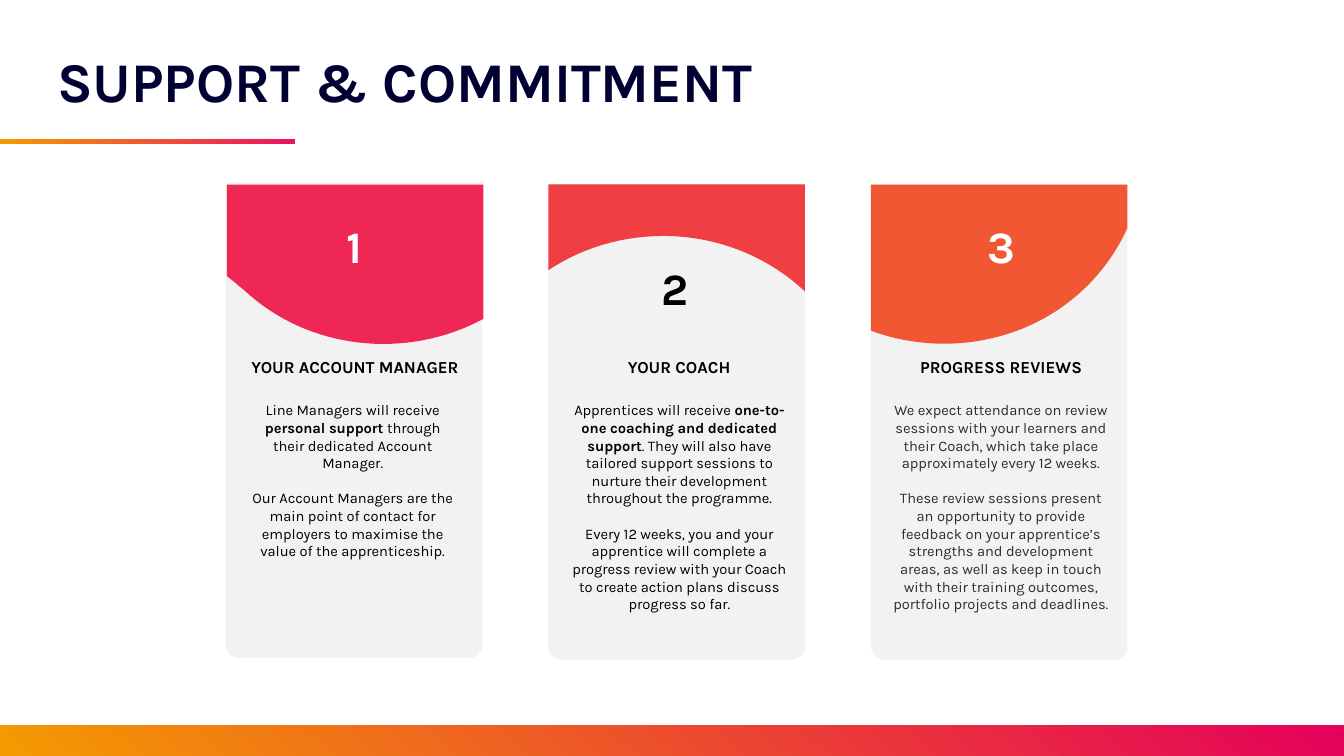
from pptx import Presentation
from pptx.dml.color import RGBColor
from pptx.enum.shapes import MSO_SHAPE
from pptx.enum.text import MSO_ANCHOR, PP_ALIGN
from pptx.util import Pt

FONT = "Karla"
NAVY = RGBColor(0x00, 0x00, 0x33)
BLACK = RGBColor(0x00, 0x00, 0x00)
WHITE = RGBColor(0xFF, 0xFF, 0xFF)
CHARCOAL = RGBColor(0x2C, 0x2C, 0x32)
GREY = RGBColor(0xF2, 0xF2, 0xF2)
AMBER = RGBColor(0xF4, 0x9B, 0x00)
MAGENTA = RGBColor(0xE5, 0x00, 0x5B)
PINK = RGBColor(0xED, 0x11, 0x64)
ROSE = RGBColor(0xEE, 0x27, 0x54)
RED = RGBColor(0xEF, 0x3F, 0x43)
ORANGE = RGBColor(0xF1, 0x57, 0x32)

TITLE = "SUPPORT & COMMITMENT"
CARD_LEFT, CARD_STEP, CARD_TOP, CARD_W, CARD_H = 161.3, 230.4, 131.8, 183.2, 339.6
CORNER = 9.5
HEAD_TOP, BODY_TOP = 254.9, 283

CARDS = [
    {
        "number": "1", "number_color": WHITE, "number_at": (161.5, 156.2),
        "heading": "YOUR ACCOUNT MANAGER", "heading_left": 162,
        "body_left": 171.5, "body_w": 161, "body_color": BLACK,
        "nudge": (0, -1.3), "cap_shift": 0.7, "cap_color": ROSE,
        "cap_curves": [
            [(0, 65.5), (4.3, 68.4), (7.9, 72), (11.8, 74.9)],
            [(11.8, 74.9), (58.3, 118.8), (128.9, 125.3), (183.2, 96)],
        ],
        "body": [
            [("Line Managers will receive ", False), ("personal support", True),
             (" through their dedicated Account Manager.", False)],
            [("Our Account Managers are the main point of contact for employers "
              "to maximise the value of the apprenticeship.", False)],
        ],
    },
    {
        "number": "2", "number_color": BLACK, "number_at": (390.5, 186.5),
        "heading": "YOUR COACH", "heading_left": 393.5,
        "body_left": 400.3, "body_w": 170, "body_color": BLACK,
        "nudge": (0, 0), "cap_shift": 0, "cap_color": RED,
        "cap_curves": [
            [(0, 61.2), (55.4, 24.5), (132.5, 28.8), (183.2, 76.3)],
        ],
        "body": [
            [("Apprentices will receive ", False),
             ("one-to-one coaching and dedicated support", True),
             (". They will also have tailored support sessions to nurture their "
              "development throughout the programme.", False)],
            [("Every 12 weeks, you and your apprentice will complete a progress "
              "review with your Coach to create action plans discuss progress so far.", False)],
        ],
    },
    {
        "number": "3", "number_color": WHITE, "number_at": (623.5, 156.2),
        "heading": "PROGRESS REVIEWS", "heading_left": 623.5,
        "body_left": 629.3, "body_w": 171.4, "body_color": CHARCOAL,
        "nudge": (0, 0), "cap_shift": 0, "cap_color": ORANGE,
        "cap_curves": [
            [(0, 104.4), (50.4, 123.1), (110.9, 113.8), (151.9, 74.9)],
            [(151.9, 74.9), (165.6, 61.9), (175.7, 47.5), (183.2, 31)],
        ],
        "body": [
            [("We expect attendance on review sessions with your learners and their "
              "Coach, which take place approximately every 12 weeks.", False)],
            [("These review sessions present an opportunity to provide feedback on "
              "your apprentice’s strengths and development areas, as well as keep in "
              "touch with their training outcomes, portfolio projects and deadlines.", False)],
        ],
    },
]


def paint(s, color):
    s.shadow.inherit = False
    s.fill.solid()
    s.fill.fore_color.rgb = color
    s.line.fill.background()


def add_gradient_bar(shapes, left, top, width, height, colors, angle):
    s = shapes.add_shape(MSO_SHAPE.RECTANGLE, Pt(left), Pt(top), Pt(width), Pt(height))
    s.shadow.inherit = False
    s.line.fill.background()
    s.fill.gradient()
    s.fill.gradient_angle = angle
    for stop, color in zip(s.fill.gradient_stops, colors):
        stop.color.rgb = color


def add_text(shapes, left, top, width, height, paragraphs, size, color,
             align=PP_ALIGN.CENTER, inset=True, gap=0):
    tf = shapes.add_textbox(Pt(left), Pt(top), Pt(width), Pt(height)).text_frame
    tf.word_wrap = True
    if not inset:
        tf.margin_left = tf.margin_right = tf.margin_top = tf.margin_bottom = 0
    for i, runs in enumerate(paragraphs):
        p = tf.add_paragraph() if i else tf.paragraphs[0]
        p.alignment = align
        if i:
            p.space_before = Pt(gap)
        for text, bold in runs:
            r = p.add_run()
            r.text = text
            r.font.name = FONT
            r.font.size = Pt(size)
            r.font.bold = bold
            r.font.color.rgb = color
    return tf


def bezier(points, steps=32):
    a, b, c, d = points
    for i in range(steps + 1):
        t = i / steps
        u = 1 - t
        yield tuple(u**3 * a[k] + 3 * u * u * t * b[k] + 3 * u * t * t * c[k] + t**3 * d[k]
                    for k in (0, 1))


def add_cap(shapes, left, top, curves, color):
    outline = [xy for curve in curves for xy in bezier(curve)] + [(CARD_W, 0)]
    builder = shapes.build_freeform(0, 0, scale=Pt(1) / 100)
    builder.add_line_segments([(round(x * 100), round(y * 100)) for x, y in outline], close=True)
    paint(builder.convert_to_shape(Pt(left), Pt(top)), color)


def add_card(shapes, index, card):
    left = CARD_LEFT + index * CARD_STEP
    dx, dy = card["nudge"]
    s = shapes.add_shape(MSO_SHAPE.ROUND_2_SAME_RECTANGLE, Pt(left + dx), Pt(CARD_TOP + dy),
                         Pt(CARD_W), Pt(CARD_H))
    s.adjustments[0] = 0
    s.adjustments[1] = CORNER / CARD_W
    paint(s, GREY)
    add_cap(shapes, left + card["cap_shift"], CARD_TOP, card["cap_curves"], card["cap_color"])
    add_text(shapes, *card["number_at"], CARD_W, 38.9, [[(card["number"], True)]], 32,
             card["number_color"], inset=False)
    add_text(shapes, card["heading_left"], HEAD_TOP, CARD_W, 14.4, [[(card["heading"], True)]],
             12, BLACK, inset=False)
    add_text(shapes, card["body_left"], BODY_TOP, card["body_w"], 160, card["body"], 10.5,
             card["body_color"], gap=12.6)


def main():
    prs = Presentation()
    prs.slide_width, prs.slide_height = Pt(960), Pt(540)
    shapes = prs.slides.add_slide(prs.slide_layouts[6]).shapes
    add_gradient_bar(shapes, 0, 518, 960, 22, (AMBER, MAGENTA), 50)
    add_gradient_bar(shapes, 0, 99.3, 211, 3.6, (AMBER, PINK), 0)
    for index, card in enumerate(CARDS):
        add_card(shapes, index, card)
    tf = add_text(shapes, 33.8, 18, 684.7, 67.7, [[(TITLE, True)]], 40, NAVY, PP_ALIGN.LEFT)
    tf.vertical_anchor = MSO_ANCHOR.BOTTOM
    tf.paragraphs[0].line_spacing = 0.9
    prs.save("out.pptx")


if __name__ == "__main__":
    main()
